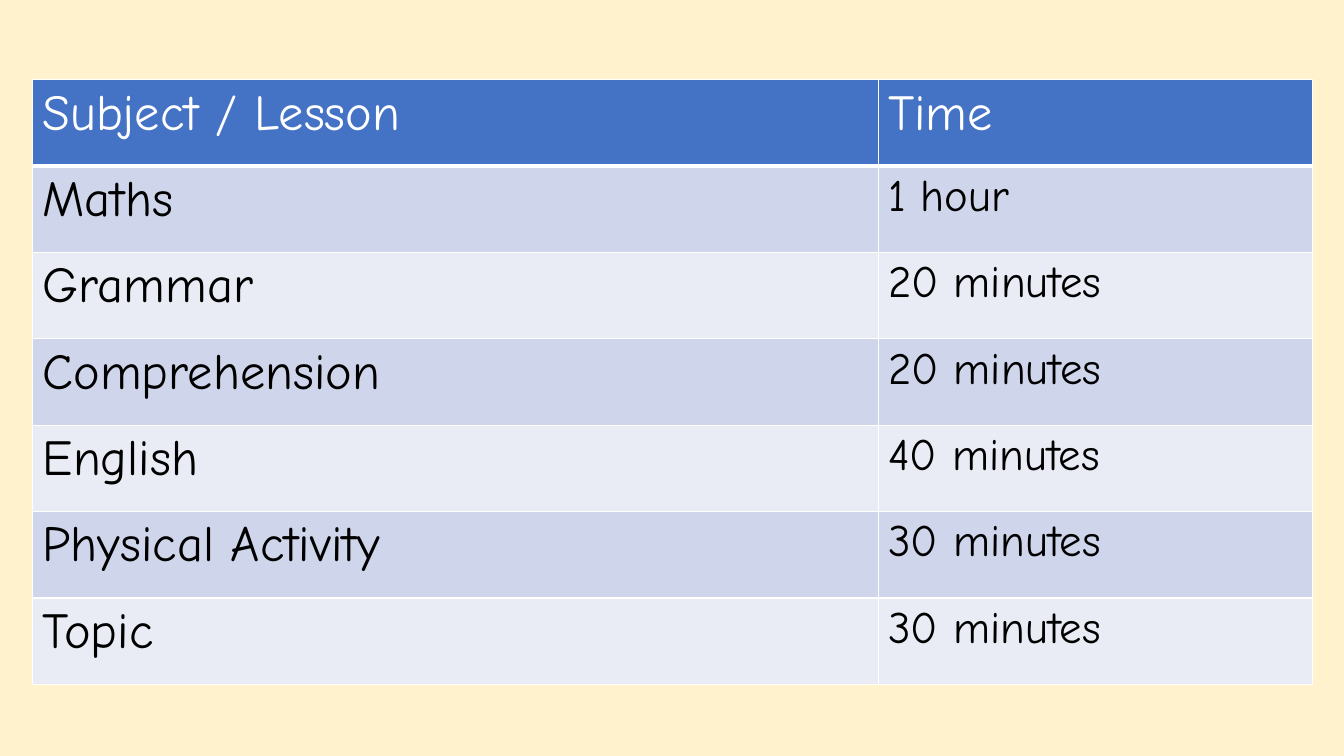
from dataclasses import dataclass

from lxml.etree import SubElement
from pptx import Presentation
from pptx.dml.color import RGBColor as Rgb
from pptx.oxml.ns import qn
from pptx.table import _Cell as Cell
from pptx.util import Pt

COLORS = {
    "background": "FFF2CC",
    "header": "4472C4",
    "odd": "CFD5EA",
    "even": "E9EBF5",
    "border": "FFFFFF",
    "header_text": "FFFFFF",
    "text": "000000",
}
FONT = "Comic Neue"
COLUMN_WIDTHS = (604, 310.3)
ROW_HEIGHT = 61.7


@dataclass(frozen=True)
class Lesson:
    subject: str
    time: str


HEADINGS = Lesson("Subject / Lesson", "Time")
LESSONS = [
    Lesson("Maths", "1 hour"),
    Lesson("Grammar", "20 minutes"),
    Lesson("Comprehension", "20 minutes"),
    Lesson("English", "40 minutes"),
    Lesson("Physical Activity", "30 minutes"),
    Lesson("Topic", "30 minutes"),
]


def add_borders(cell: Cell, bottom: float) -> None:
    """Rule all four sides of a cell; only the bottom width varies."""
    properties = cell._tc.get_or_add_tcPr()
    for side, width in (("L", 1), ("R", 1), ("T", 1), ("B", bottom)):
        line = SubElement(properties, qn(f"a:ln{side}"), w=str(Pt(width)))
        fill = SubElement(line, qn("a:solidFill"))
        SubElement(fill, qn("a:srgbClr"), val=COLORS["border"])


def fill_cell(cell: Cell, text: str, size: float, fill: str, color: str,
              bottom: float = 1) -> None:
    add_borders(cell, bottom)
    cell.fill.solid()
    cell.fill.fore_color.rgb = Rgb.from_string(COLORS[fill])
    cell.text_frame.text = text
    font = cell.text_frame.paragraphs[0].runs[0].font
    font.name = FONT
    font.size = Pt(size)
    font.bold = False
    font.color.rgb = Rgb.from_string(COLORS[color])


def main() -> None:
    presentation = Presentation()
    presentation.slide_width, presentation.slide_height = Pt(960), Pt(540)
    slide = presentation.slides.add_slide(presentation.slide_layouts[6])
    slide.background.fill.solid()
    slide.background.fill.fore_color.rgb = Rgb.from_string(COLORS["background"])

    # Timetable grid
    row_count = len(LESSONS) + 1
    timetable = slide.shapes.add_table(
        row_count, len(COLUMN_WIDTHS), Pt(23.3), Pt(57),
        Pt(sum(COLUMN_WIDTHS)), Pt(ROW_HEIGHT * row_count)).table
    for column, width in zip(timetable.columns, COLUMN_WIDTHS):
        column.width = Pt(width)
    for row in timetable.rows:
        row.height = Pt(ROW_HEIGHT)

    # Headings
    for column, heading in enumerate((HEADINGS.subject, HEADINGS.time)):
        fill_cell(timetable.cell(0, column), heading, 36,
                  "header", "header_text", bottom=3)

    # Lessons, in alternating bands
    for row, lesson in enumerate(LESSONS, start=1):
        band = "odd" if row % 2 else "even"
        fill_cell(timetable.cell(row, 0), lesson.subject, 36, band, "text")
        fill_cell(timetable.cell(row, 1), lesson.time, 32, band, "text")

    presentation.save("out.pptx")


if __name__ == "__main__":
    main()
